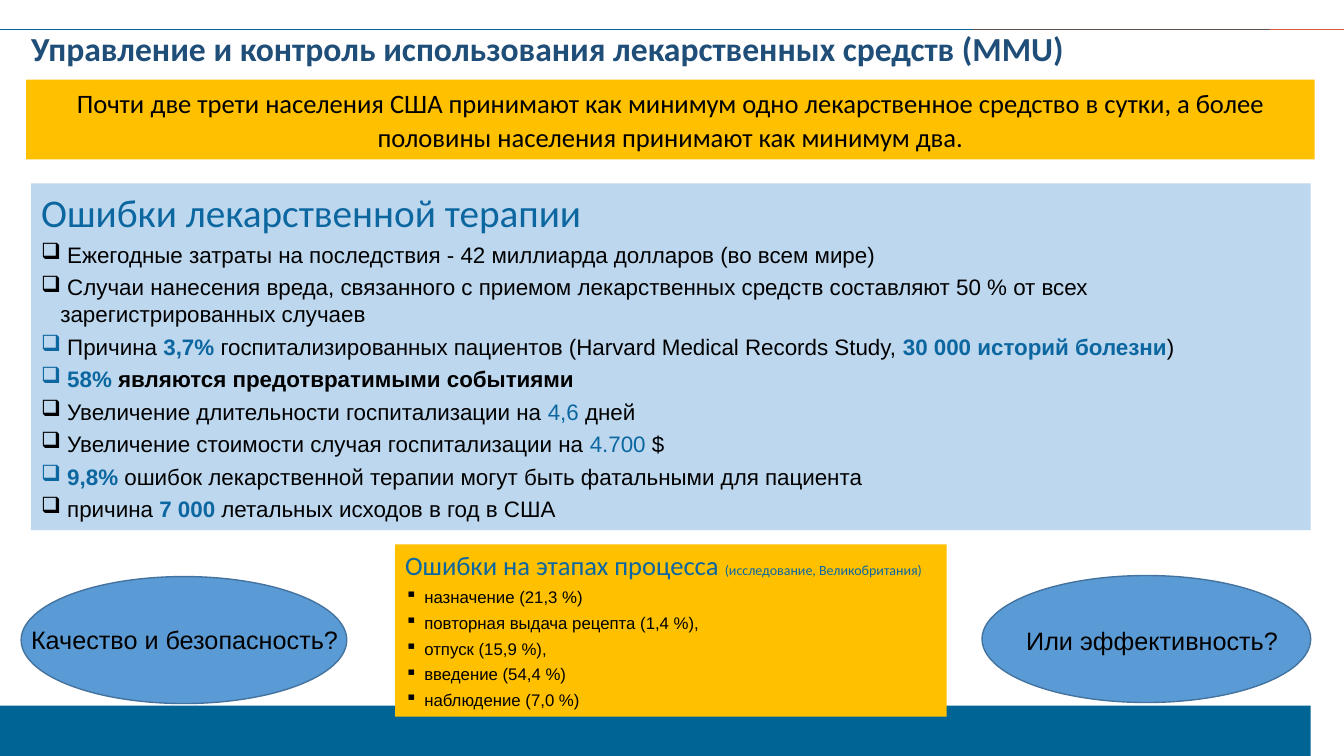
from lxml.etree import SubElement
from pptx import Presentation
from pptx.dml.color import RGBColor
from pptx.enum.shapes import MSO_CONNECTOR, MSO_SHAPE
from pptx.enum.text import MSO_ANCHOR, MSO_AUTO_SIZE, PP_ALIGN
from pptx.oxml.ns import qn
from pptx.util import Inches, Pt

BLUE, TEAL, NAVY = "0C67A0", "006595", "1F4E79"
YELLOW, PALE, OVAL = "FFC000", "BDD7EE", "5B9BD5"
BLACK, WHITE = "000000", "FFFFFF"
rgb = RGBColor.from_string


def add_text(p, text, size=16, color=BLACK, bold=False, font="Arial"):
    r = p.add_run()
    r.text = text
    r.font.size, r.font.bold, r.font.name = Pt(size), bold, font
    r.font.color.rgb = rgb(color)


def add_box(kind, left, top, width, height, fill=None, line=None):
    """Add a preset shape, or a text box when kind is None."""
    place = [Inches(v) for v in (left, top, width, height)]
    if kind is None:
        sp = s.shapes.add_textbox(*place)
    else:
        sp = s.shapes.add_shape(kind, *place)
        sp.shadow.inherit = False
        sp.fill.solid()
        sp.fill.fore_color.rgb = rgb(fill)
        if line:
            sp.line.color.rgb = rgb(line)
            sp.line.width = Pt(1)
        else:
            sp.line.fill.background()
    tf = sp.text_frame
    tf.word_wrap = True
    tf.vertical_anchor = MSO_ANCHOR.TOP
    tf.paragraphs[0].alignment = PP_ALIGN.LEFT
    return sp


prs = Presentation()
prs.slide_width, prs.slide_height = Inches(13.33), Inches(7.5)
s = prs.slides.add_slide(prs.slide_layouts[5])

# Footer wave: two numbers are a corner, six are a Bezier curve
wave = [
    (0.75, 6.98, 0.91, 7.1, 0.91, 7.23), (0.91, 7.25, 0.93, 7.27, 0.96, 7.27),
    (2.68, 7.38, 11.27, 7.39, 12.81, 7.27), (12.84, 7.27, 12.86, 7.25, 12.86, 7.23),
    (13.33, 7.23), (13.33, 7.5), (0, 7.5), (0, 7.19),
    (0.03, 7.07, 0.18, 6.98, 0.37, 6.95),
]
STEPS = 24
outline = [(0.54, 6.95)]
for part in wave:
    if len(part) == 2:
        outline.append(part)
        continue
    x0, y0 = outline[-1]
    x1, y1, x2, y2, x3, y3 = part
    for i in range(1, STEPS + 1):
        t = i / STEPS
        a, b, c, d = (1 - t) ** 3, 3 * t * (1 - t) ** 2, 3 * t * t * (1 - t), t ** 3
        outline.append((a * x0 + b * x1 + c * x2 + d * x3,
                        a * y0 + b * y1 + c * y2 + d * y3))
builder = s.shapes.build_freeform(*outline[0], scale=Inches(1))
builder.add_line_segments(outline[1:], close=True)
footer = builder.convert_to_shape()
footer.shadow.inherit = False
footer.fill.solid()
footer.fill.fore_color.rgb = rgb(TEAL)
footer.line.fill.background()

# Header rule in three colours
for start, end, color in [(0, 9.65, TEAL), (9.65, 12.6, "5F504C"), (12.6, 13.33, "DA5743")]:
    rule = s.shapes.add_connector(MSO_CONNECTOR.STRAIGHT, Inches(start), Inches(0.29),
                                  Inches(end), Inches(0.29))
    rule.line.color.rgb = rgb(color)
    rule.line.width = Pt(1)
    SubElement(rule._element.spPr, qn("a:effectLst"))

# Page number
tf = add_box(None, 12.92, 7.23, 0.35, 0.26).text_frame
tf.margin_left = tf.margin_right = tf.margin_top = tf.margin_bottom = 0
tf.vertical_anchor = MSO_ANCHOR.MIDDLE
tf.paragraphs[0].alignment = PP_ALIGN.CENTER
add_text(tf.paragraphs[0], "9", size=12, color=WHITE, font="Lato")

# Title
title = s.shapes.title
title.left, title.top, title.width, title.height = (
    Inches(v) for v in (0.21, 0.21, 11.25, 0.54))
tf = title.text_frame
tf.auto_size = MSO_AUTO_SIZE.NONE
tf.vertical_anchor = MSO_ANCHOR.MIDDLE
tf.paragraphs[0].alignment = PP_ALIGN.LEFT
add_text(tf.paragraphs[0], "Управление и контроль использования лекарственных средств (MMU)",
         size=24, color=NAVY, bold=True, font="Calibri")

# Key message
p = add_box(MSO_SHAPE.RECTANGLE, 0.26, 0.79, 12.78, 0.79, YELLOW).text_frame.paragraphs[0]
p.alignment = PP_ALIGN.CENTER
p.line_spacing = 1.07
p.space_after = Pt(6)
add_text(p, "Почти", size=19, font="Calibri")
add_text(p, " ", size=18, font="Times New Roman")
add_text(p, "две трети населения США принимают как минимум одно лекарственное средство в сутки, "
         "а более половины населения принимают как минимум два.", size=19, font="Calibri")

# Bulleted panels: each bullet is a list of (text, colour, bold) runs
therapy_errors = [
    [(" Ежегодные затраты на последствия - 42 миллиарда долларов (во всем мире)", BLACK, False)],
    [(" Случаи нанесения вреда, связанного с приемом лекарственных средств составляют 50 % "
      "от всех зарегистрированных случаев", BLACK, False)],
    [(" ", BLUE, True), ("Причина ", BLACK, False), ("3,7% ", BLUE, True),
     ("госпитализированных пациентов (Harvard Medical Records Study, ", BLACK, False),
     ("30 000 историй болезни", BLUE, True), (")", BLACK, False)],
    [(" 58%", BLUE, True), (" являются предотвратимыми событиями", BLACK, True)],
    [(" Увеличение длительности госпитализации на ", BLACK, False),
     ("4,6 ", BLUE, False), ("дней", BLACK, False)],
    [(" Увеличение стоимости случая госпитализации на ", BLACK, False),
     ("4.700", BLUE, False), (" $", BLACK, False)],
    [(" 9,8%", BLUE, True),
     (" ошибок лекарственной терапии могут быть фатальными для пациента", BLACK, False)],
    [(" причина ", BLACK, False), ("7 000", BLUE, True),
     (" летальных исходов в год в США", BLACK, False)],
]
stage_errors = [[(text, BLACK, False)] for text in (
    "назначение (21,3 %)", "повторная выдача рецепта (1,4 %),", "отпуск (15,9 %),",
    "введение (54,4 %)", "наблюдение (7,0 %)")]
panels = [
    ((0.31, 1.82, 12.69, 3.44), PALE, [("Ошибки лекарственной терапии", 28)],
     "❑", 16, therapy_errors),
    ((3.92, 5.4, 5.47, 1.71), YELLOW,
     [("Ошибки на этапах процесса ", 19), ("(исследование, Великобритания)", 10)],
     "▪", 12, stage_errors),
]
for place, fill, heading, mark, size, bullets in panels:
    tf = add_box(MSO_SHAPE.RECTANGLE, *place, fill).text_frame
    for text, heading_size in heading:
        add_text(tf.paragraphs[0], text, size=heading_size, color=BLUE, font="Calibri")
    for runs in bullets:
        p = tf.add_paragraph()
        p.alignment = PP_ALIGN.LEFT
        p.space_before = Pt(4)
        pPr = p._p.get_or_add_pPr()
        pPr.set("marL", str(Inches(0.19)))
        pPr.set("indent", str(-Inches(0.19)))
        SubElement(pPr, qn("a:buChar")).set("char", mark)
        for text, color, bold in runs:
            add_text(p, text, size=size, color=color, bold=bold)

# Questions on ovals
questions = [
    ("Качество и безопасность?", (0.21, 5.72, 3.23, 1.26), (0.21, 6.14, 3.43, 0.4)),
    ("Или эффективность?", (9.74, 5.71, 3.26, 1.26), (10.08, 6.15, 2.76, 0.4)),
]
for question, oval, label in questions:
    add_box(MSO_SHAPE.OVAL, *oval, OVAL, "43739E")
    add_text(add_box(None, *label).text_frame.paragraphs[0], question, size=18)

prs.save("out.pptx")
